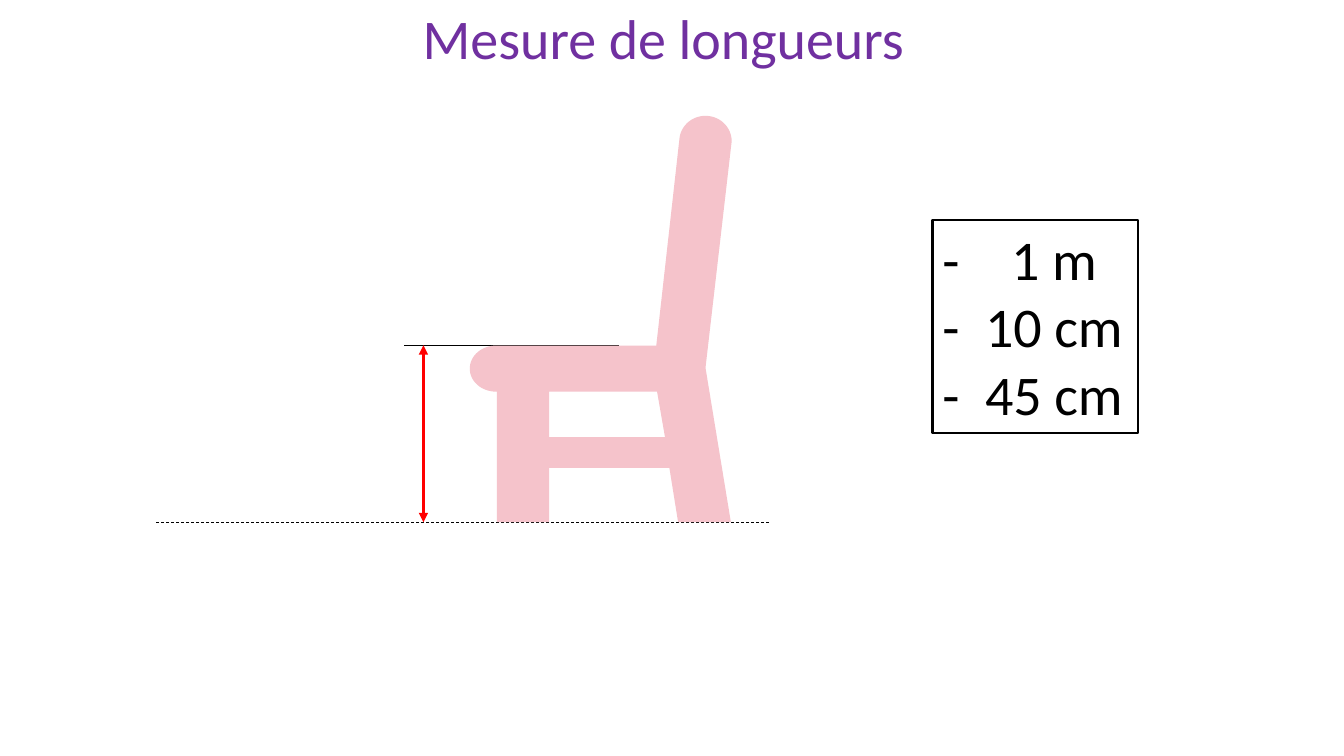
from dataclasses import dataclass
from math import cos, radians, sin

from lxml.etree import SubElement
from pptx import Presentation
from pptx.dml.color import RGBColor
from pptx.enum.dml import MSO_LINE_DASH_STYLE as Dash
from pptx.enum.shapes import MSO_CONNECTOR as Connector, MSO_SHAPE as Shape
from pptx.enum.text import MSO_ANCHOR as Anchor, MSO_AUTO_SIZE as AutoSize, PP_ALIGN as Align
from pptx.oxml.ns import qn
from pptx.util import Cm, Pt


@dataclass(frozen=True)
class Theme:
    font: str = "Calibri"
    size: int = 40
    title: RGBColor = RGBColor(0x70, 0x30, 0xA0)
    ink: RGBColor = RGBColor(0, 0, 0)
    measure: RGBColor = RGBColor(0xFF, 0, 0)
    chair: RGBColor = RGBColor(0xF5, 0xC3, 0xCB)


THEME = Theme()
ANSWERS = ("1 m", "10 cm", "45 cm")
FLOOR = 13.16
SEAT_TOP = 8.7


def write(paragraph, text, color=THEME.ink, align=Align.LEFT, spacing=1.0, center_tab=None):
    run = paragraph.add_run()
    run.text = text
    run.font.name = THEME.font
    run.font.size = Pt(THEME.size)
    run.font.color.rgb = color
    paragraph.alignment = align
    paragraph.line_spacing = spacing
    if center_tab:
        tabs = SubElement(paragraph._p.get_or_add_pPr(), qn("a:tabLst"))
        SubElement(tabs, qn("a:tab"), pos=str(Cm(center_tab)), algn="ctr")


def add_title(slide, text):
    title = slide.shapes.title
    title.left, title.top, title.width, title.height = Cm(2.11), Cm(0.43), Cm(29.21), Cm(1.24)
    frame = title.text_frame
    frame.auto_size = AutoSize.NONE
    frame.vertical_anchor = Anchor.MIDDLE
    write(frame.paragraphs[0], text, color=THEME.title, align=Align.CENTER, spacing=0.9)


def add_line(slide, start, end, color, width, dash=None, arrows=False):
    line = slide.shapes.add_connector(Connector.STRAIGHT, *map(Cm, start + end))
    line.line.color.rgb = color
    line.line.width = Pt(width)
    if dash:
        line.line.dash_style = dash
    if arrows:
        outline = line.line._get_or_add_ln()
        for tip in ("a:headEnd", "a:tailEnd"):
            SubElement(outline, qn(tip), type="triangle")
    SubElement(line._element.spPr, qn("a:effectLst"))


def arc(center, radii, first, last, steps=32):
    angles = [radians(first + (last - first) * step / steps) for step in range(steps + 1)]
    return [(center[0] + radii[0] * cos(angle), center[1] + radii[1] * sin(angle))
            for angle in angles]


def add_outline(slide, contours, color):
    pen = None
    for contour in contours:
        points = [(Cm(x), Cm(y)) for x, y in contour]
        if pen is None:
            pen = slide.shapes.build_freeform(*points[0])
        else:
            pen.move_to(*points[0])
        pen.add_line_segments(points[1:], close=True)
    outline = pen.convert_to_shape()
    outline.shadow.inherit = False
    outline.fill.solid()
    outline.fill.fore_color.rgb = color
    outline.line.fill.background()


def add_chair(slide):
    back_top = arc((17.78, 3.56), (0.66, 0.64), 0, -171)
    seat_front = arc((12.5, 9.29), (0.66, 0.58), -90, -270)
    front_leg = [(12.52, 9.87), (12.52, FLOOR), (13.84, FLOOR), (13.84, 11.79)]
    back_leg = [(16.87, 11.79), (17.09, FLOOR), (18.42, FLOOR), (17.78, 9.27)]
    gap = [(13.84, 11.02), (13.84, 9.87), (16.56, 9.87), (16.76, 11.02)]
    body = back_top + [(16.54, 8.71)] + seat_front + front_leg + back_leg
    add_outline(slide, [body, gap], THEME.chair)


def add_answers(slide, answers):
    box = slide.shapes.add_shape(Shape.RECTANGLE, Cm(23.5), Cm(5.54), Cm(5.18), Cm(5.38))
    box.shadow.inherit = False
    box.fill.background()
    box.line.color.rgb = THEME.ink
    box.line.width = Pt(1.5)
    frame = box.text_frame
    frame.word_wrap = True
    frame.vertical_anchor = Anchor.TOP
    for index, answer in enumerate(answers):
        paragraph = frame.add_paragraph() if index else frame.paragraphs[0]
        write(paragraph, f"-\t{answer}", center_tab=2.81)


def main():
    deck = Presentation()
    deck.slide_width, deck.slide_height = Cm(33.87), Cm(19.05)
    slide = deck.slides.add_slide(deck.slide_layouts[5])
    add_title(slide, "Mesure de longueurs")
    add_line(slide, (3.94, FLOOR), (19.43, FLOOR), THEME.ink, 0.5, dash=Dash.DASH)
    add_line(slide, (10.19, SEAT_TOP), (15.6, SEAT_TOP), THEME.ink, 0.75)
    add_line(slide, (10.67, SEAT_TOP), (10.67, FLOOR), THEME.measure, 2.25, arrows=True)
    add_chair(slide)
    add_answers(slide, ANSWERS)
    deck.save("out.pptx")


if __name__ == "__main__":
    main()
